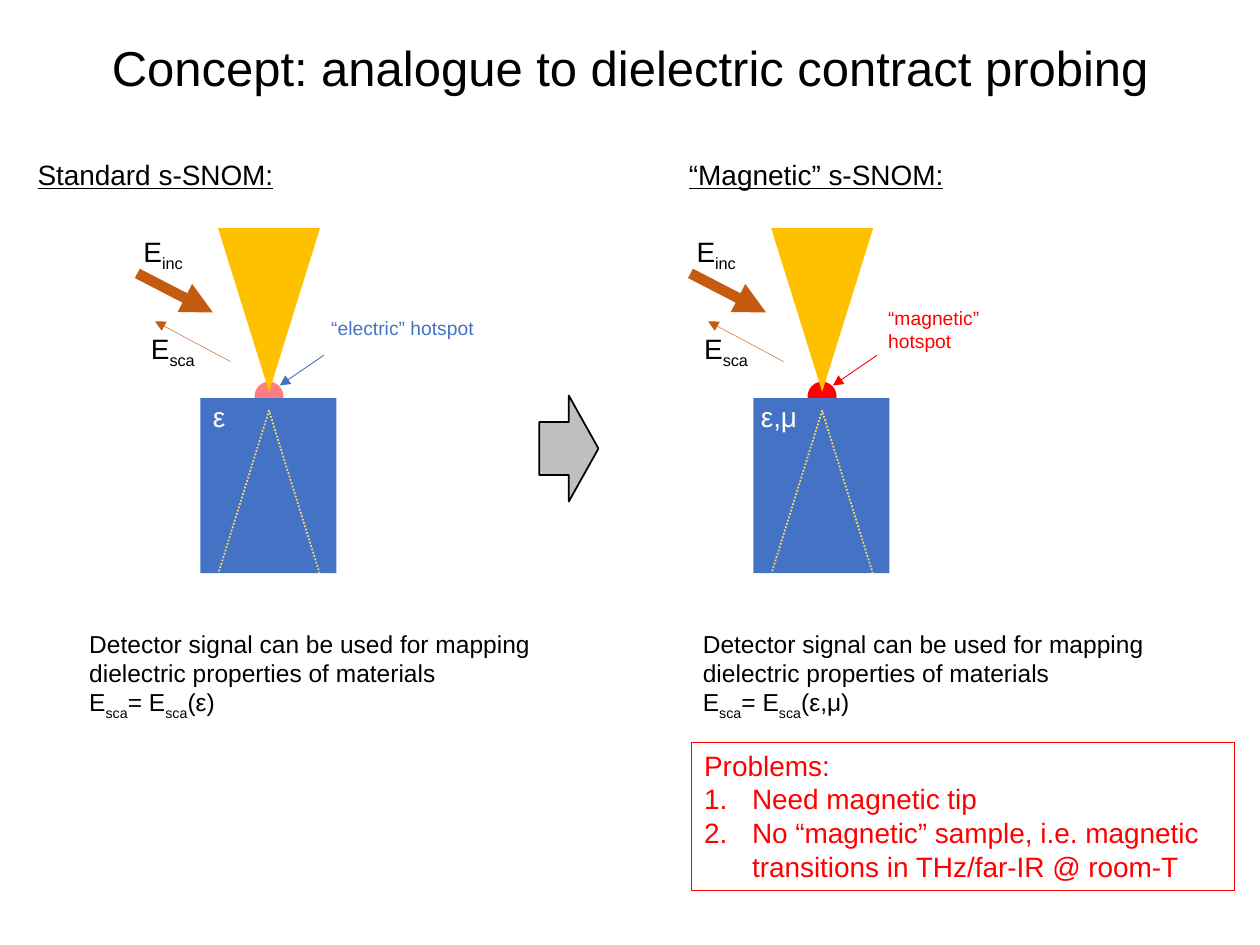
from lxml.etree import SubElement
from pptx import Presentation
from pptx.dml.color import RGBColor
from pptx.enum.dml import MSO_LINE
from pptx.enum.shapes import MSO_CONNECTOR, MSO_SHAPE
from pptx.enum.text import MSO_ANCHOR, PP_ALIGN
from pptx.oxml.ns import qn
from pptx.util import Inches, Pt

BLACK = RGBColor(0x00, 0x00, 0x00)
WHITE = RGBColor(0xFF, 0xFF, 0xFF)
RED = RGBColor(0xFF, 0x00, 0x00)
BLUE = RGBColor(0x44, 0x72, 0xC4)
GOLD = RGBColor(0xFF, 0xC0, 0x00)
PALE_GOLD = RGBColor(0xFF, 0xD9, 0x66)
BROWN = RGBColor(0xC5, 0x5A, 0x11)
GREY = RGBColor(0xBF, 0xBF, 0xBF)
FONT = "Arial"


def format_paragraph(para, size, color):
    para.font.name = FONT
    para.font.size = Pt(size)
    para.font.color.rgb = color


def write_paragraph(para, parts, size, color):
    format_paragraph(para, size, color)
    for index, part in enumerate(parts):
        span = para.add_run()
        span.text = part
        if index % 2:
            span._r.get_or_add_rPr().set("baseline", "-25000")


def add_text(page, box, paragraphs, size, color=BLACK, underline=None):
    frame = page.shapes.add_textbox(*map(Inches, box)).text_frame
    frame.word_wrap = True
    for index, parts in enumerate(paragraphs):
        para = frame.add_paragraph() if index else frame.paragraphs[0]
        write_paragraph(para, parts, size, color)
        para.font.underline = underline


def add_figure(page, kind, box, fill=None, line=None, width=1):
    figure = page.shapes.add_shape(kind, *map(Inches, box))
    figure.shadow.inherit = False
    if fill is None:
        figure.fill.background()
    else:
        figure.fill.solid()
        figure.fill.fore_color.rgb = fill
    if line is None:
        figure.line.fill.background()
    else:
        figure.line.color.rgb = line
        figure.line.width = Pt(width)
    return figure


def add_arrow(page, start, end, color, width):
    arrow = page.shapes.add_connector(
        MSO_CONNECTOR.STRAIGHT, *map(Inches, start + end))
    arrow.line.color.rgb = color
    arrow.line.width = Pt(width)
    SubElement(arrow.line._get_or_add_ln(), qn("a:tailEnd"), type="triangle")
    SubElement(arrow._element.spPr, qn("a:effectLst"))


def add_title(page, box, text):
    title = page.shapes.title
    title.left, title.top, title.width, title.height = map(Inches, box)
    title.text_frame.vertical_anchor = MSO_ANCHOR.MIDDLE
    para = title.text_frame.paragraphs[0]
    write_paragraph(para, [text], 28, BLACK)
    para.alignment = PP_ALIGN.CENTER
    para.line_spacing = 0.9


def add_diagram(page, left, top, accent, hotspot_alpha=None):
    hotspot = add_figure(page, MSO_SHAPE.OVAL,
                         (left + 0.98, top + 1.22, 0.23, 0.23), RED)
    if hotspot_alpha:
        color = hotspot._element.spPr.find(qn("a:solidFill"))[0]
        SubElement(color, qn("a:alpha"), val=str(hotspot_alpha * 1000))
    add_arrow(page, (left + 1.53, top + 1.01), (left + 1.18, top + 1.25),
              accent, 0.5)

    tip = add_figure(page, MSO_SHAPE.ISOSCELES_TRIANGLE,
                     (left + 0.69, top, 0.81, 1.3), GOLD)
    tip.rotation = 180
    add_arrow(page, (left + 0.05, top + 0.36), (left + 0.65, top + 0.67),
              BROWN, 6)
    add_text(page, (left, top, 0.6, 0.37), [["E", "inc"]], 16)
    add_text(page, (left + 0.06, top + 0.77, 0.6, 0.37), [["E", "sca"]], 16)
    add_arrow(page, (left + 0.79, top + 1.06), (left + 0.19, top + 0.74),
              BROWN, 0.25)

    add_figure(page, MSO_SHAPE.RECTANGLE,
               (left + 0.55, top + 1.35, 1.08, 1.39), BLUE)
    mirror_tip = add_figure(page, MSO_SHAPE.ISOSCELES_TRIANGLE,
                            (left + 0.69, top + 1.45, 0.81, 1.3),
                            line=PALE_GOLD)
    mirror_tip.line.dash_style = MSO_LINE.ROUND_DOT
    add_figure(page, MSO_SHAPE.RECTANGLE,
               (left + 0.55, top + 2.74, 1.08, 0.05), WHITE)


def add_caption(page, left, top, symbols):
    add_text(page, (left, top, 4.06, 0.81), [
        ["Detector signal can be used for mapping "
         "dielectric properties of materials"],
        ["E", "sca", "= E", "sca", f"({symbols})"],
    ], 14)


def add_problems(page, box, heading, problems):
    panel = add_figure(page, MSO_SHAPE.RECTANGLE, box, line=RED, width=0.75)
    frame = panel.text_frame
    frame.word_wrap = True
    frame.vertical_anchor = MSO_ANCHOR.TOP
    for index, text in enumerate([heading] + problems):
        para = frame.add_paragraph() if index else frame.paragraphs[0]
        write_paragraph(para, [text], 16, RED)
        para.alignment = PP_ALIGN.LEFT
        if index:
            properties = para._p.get_or_add_pPr()
            properties.set("marL", str(Inches(0.38)))
            properties.set("indent", str(-Inches(0.38)))
            numbering = properties.makeelement(
                qn("a:buAutoNum"), {"type": "arabicPeriod"})
            properties.insert(0, numbering)


def main():
    deck = Presentation()
    deck.slide_width, deck.slide_height = Inches(10), Inches(7.5)
    page = deck.slides.add_slide(deck.slide_layouts[5])
    add_title(page, (0, 0, 10, 1.12),
              "Concept: analogue to dielectric contract probing")

    add_text(page, (0.2, 1.2, 4.43, 0.37), [["Standard s-SNOM:"]], 16,
             underline=True)
    add_diagram(page, 1.04, 1.81, BLUE, hotspot_alpha=50)
    add_text(page, (2.53, 2.46, 1.38, 0.29), [["“electric” hotspot"]], 11, BLUE)
    add_text(page, (1.59, 3.12, 0.31, 0.37), [["ε"]], 16, WHITE)
    add_caption(page, 0.61, 4.94, "ε")

    add_text(page, (5.37, 1.2, 4.43, 0.37), [["“Magnetic” s-SNOM:"]], 16,
             underline=True)
    add_diagram(page, 5.43, 1.81, RED)
    add_text(page, (6.95, 2.38, 1.38, 0.47), [["“magnetic” hotspot"]], 11, RED)
    add_text(page, (5.94, 3.12, 0.57, 0.37), [["ε,μ"]], 16, WHITE)
    add_caption(page, 5.48, 4.94, "ε,μ")

    add_problems(page, (5.49, 5.89, 4.31, 1.18), "Problems:", [
        "Need magnetic tip",
        "No “magnetic” sample, i.e. magnetic transitions in "
        "THz/far-IR @ room-T",
    ])
    add_figure(page, MSO_SHAPE.RIGHT_ARROW, (4.28, 3.14, 0.47, 0.84),
               GREY, BLACK)
    deck.save("out.pptx")


if __name__ == "__main__":
    main()
